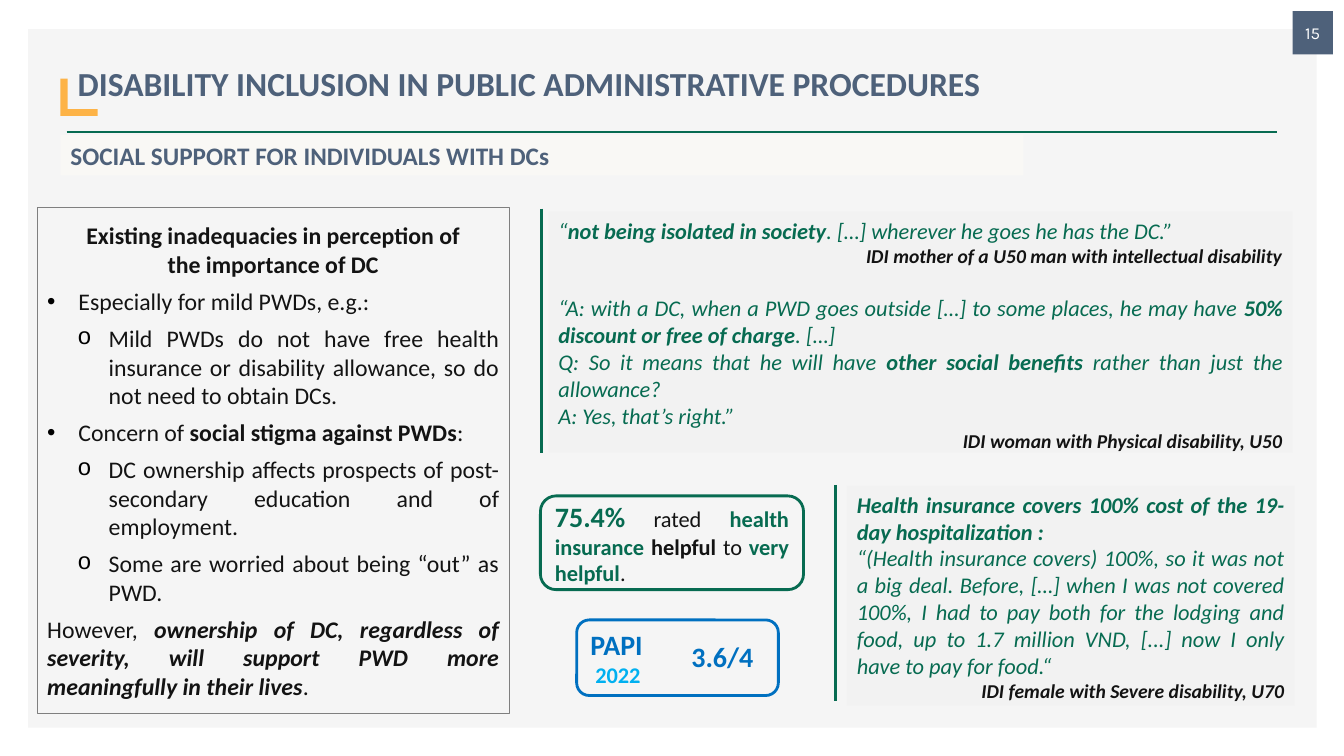
from dataclasses import dataclass, field

from lxml import etree
from pptx import Presentation
from pptx.dml.color import RGBColor
from pptx.enum.shapes import MSO_CONNECTOR, MSO_SHAPE
from pptx.enum.text import MSO_ANCHOR, PP_ALIGN
from pptx.oxml.ns import qn
from pptx.util import Inches, Pt

LEFT, CENTER, RIGHT, JUSTIFY = PP_ALIGN.LEFT, PP_ALIGN.CENTER, PP_ALIGN.RIGHT, PP_ALIGN.JUSTIFY
TOP, MIDDLE = MSO_ANCHOR.TOP, MSO_ANCHOR.MIDDLE
RECT, ROUND_RECT = MSO_SHAPE.RECTANGLE, MSO_SHAPE.ROUNDED_RECTANGLE
STRAIGHT = MSO_CONNECTOR.STRAIGHT

WHITE = RGBColor(0xFF, 0xFF, 0xFF)
PANEL = RGBColor(0xF5, 0xF5, 0xF5)
QUOTE_FILL = RGBColor(0xF2, 0xF2, 0xF2)
CREAM = RGBColor(0xF9, 0xF8, 0xF5)
SLATE = RGBColor(0x4E, 0x61, 0x7A)
ORANGE = RGBColor(0xFD, 0xB3, 0x47)
GREEN = RGBColor(0x07, 0x6B, 0x51)
BLUE = RGBColor(0x00, 0x70, 0xC0)
SKY = RGBColor(0x00, 0xB0, 0xF0)
INK = RGBColor(0x13, 0x13, 0x13)
GREY = RGBColor(0x7F, 0x7F, 0x7F)

BULLET_FONTS = {"•": "Arial", "o": "Courier New"}
BULLET_MARGINS = {"•": 0.31, "o": 0.61}
HANGING = 0.31


@dataclass
class Run:
    text: str
    bold: bool | None = None
    italic: bool | None = None
    size: float | None = None
    color: RGBColor | None = None


@dataclass
class Para:
    runs: list[Run] = field(default_factory=list)
    align: PP_ALIGN = JUSTIFY
    bullet: str = ""
    before: float = 0
    after: float = 0


@dataclass
class Quote:
    box: tuple[float, float, float, float]
    rule: tuple[float, float, float]
    paras: list[Para]


def add_bullet(p, char: str) -> None:
    pPr = p._p.get_or_add_pPr()
    pPr.set("marL", str(Inches(BULLET_MARGINS[char])))
    pPr.set("indent", str(-Inches(HANGING)))
    color = etree.SubElement(pPr, qn("a:buClr"))
    etree.SubElement(color, qn("a:srgbClr"), val="000000")
    etree.SubElement(pPr, qn("a:buFont"), typeface=BULLET_FONTS[char])
    etree.SubElement(pPr, qn("a:buChar"), char=char)


def write(sp, paras: list[Para], *, size: float, color: RGBColor, bold: bool = False,
          italic: bool = False, font: str = "Calibri", anchor=MIDDLE, spacing: float = 1.0) -> None:
    """Fill a shape with paragraphs; runs override the given format."""
    tf = sp.text_frame
    tf.word_wrap = True
    tf.vertical_anchor = anchor
    for i, para in enumerate(paras):
        p = tf.paragraphs[0] if i == 0 else tf.add_paragraph()
        if para.bullet:
            add_bullet(p, para.bullet)
        p.alignment = para.align
        p.line_spacing = spacing
        p.space_before, p.space_after = Pt(para.before), Pt(para.after)
        for run in para.runs:
            r = p.add_run()
            r.text = run.text
            r.font.name = font
            r.font.size = Pt(run.size or size)
            r.font.bold = bold if run.bold is None else run.bold
            r.font.italic = italic if run.italic is None else run.italic
            r.font.color.rgb = run.color or color


def add_box(shapes, x: float, y: float, w: float, h: float, *, kind=RECT,
            fill: RGBColor | None = None, line: RGBColor | None = None, width: float = 2):
    sp = shapes.add_shape(kind, Inches(x), Inches(y), Inches(w), Inches(h))
    sp.shadow.inherit = False
    if fill is None:
        sp.fill.background()
    else:
        sp.fill.solid()
        sp.fill.fore_color.rgb = fill
    if line is None:
        sp.line.fill.background()
    else:
        sp.line.color.rgb = line
        sp.line.width = Pt(width)
    return sp


def add_rule(shapes, x1: float, y1: float, x2: float, y2: float, width: float) -> None:
    rule = shapes.add_connector(STRAIGHT, Inches(x1), Inches(y1), Inches(x2), Inches(y2))
    rule.line.color.rgb = GREEN
    rule.line.width = Pt(width)
    etree.SubElement(rule._element.spPr, qn("a:effectLst"))


def add_quote(shapes, quote: Quote) -> None:
    group = shapes.add_group_shape().shapes
    write(add_box(group, *quote.box, fill=QUOTE_FILL), quote.paras,
          size=16, color=GREEN, italic=True, anchor=TOP)
    x, top, bottom = quote.rule
    add_rule(group, x, top, x, bottom, 2.25)


def speaker(text: str) -> Para:
    return Para([Run(text, bold=True, size=14, color=INK)], RIGHT)


PERCEPTION = [
    Para([Run("Existing inadequacies in perception of", bold=True)], CENTER),
    Para([Run("the importance of DC", bold=True)], CENTER, after=6),
    Para([Run("Especially for mild PWDs, e.g.:")], bullet="•", after=6),
    Para([Run("Mild PWDs do not have free health insurance or disability allowance, "
              "so do not need to obtain DCs.")], bullet="o", after=6),
    Para([Run("Concern of"), Run(" social stigma against PWDs", bold=True), Run(":")],
         bullet="•", after=6),
    Para([Run("DC ownership affects prospects of post-secondary education and of employment.")],
         bullet="o", after=6),
    Para([Run("Some are worried about being “out” as PWD.")], bullet="o", after=6),
    Para([Run("However, "),
          Run("ownership of DC, regardless of severity, will support PWD more "
              "meaningfully in their lives", bold=True, italic=True),
          Run(".")], after=6),
]

QUOTES = [
    Quote((5.44, 2.1, 7.38, 2.39), (5.37, 2.07, 4.49), [
        Para([Run("“"), Run("not being isolated in society", bold=True),
              Run(". […] wherever he goes he has the DC.”")]),
        speaker("IDI mother of a U50 man with intellectual disability"),
        Para([Run("“A: with a DC, when a PWD goes outside […] to some places, he may have "),
              Run("50% discount or free of charge", bold=True), Run(". […]")], before=19.5),
        Para([Run("Q: So it means that he will have "), Run("other social benefits ", bold=True),
              Run("rather than just the allowance?")]),
        Para([Run("A: Yes, that’s right.”")]),
        speaker("IDI woman with Physical disability, U50"),
    ]),
    Quote((8.4, 4.82, 4.44, 2.18), (8.29, 4.81, 6.95), [
        Para([Run("Health insurance covers 100% cost of the 19-day hospitalization :", bold=True)]),
        Para([Run("“(Health insurance covers) 100%, so it was not a big deal. Before, […] when I "
                  "was not covered 100%, I had to pay both for the lodging and food, up to "
                  "1.7 million VND, [...] now I only have to pay for food.“")]),
        speaker("IDI female with Severe disability, U70"),
    ]),
]

RATING = [Para([
    Run("75.4%", bold=True, size=20, color=GREEN), Run(" rated "),
    Run("health insurance ", bold=True, color=GREEN), Run("helpful ", bold=True), Run("to"),
    Run(" very helpful", bold=True, color=GREEN), Run("."),
])]


def main() -> None:
    prs = Presentation()
    prs.slide_width, prs.slide_height = Inches(13.33), Inches(7.5)
    s = prs.slides.add_slide(prs.slide_layouts[5])
    shapes = s.shapes

    add_box(shapes, 0.28, 0.29, 12.78, 6.93, fill=PANEL)
    add_rule(shapes, 0.66, 1.31, 12.67, 1.31, 2)
    number = add_box(shapes, 12.82, 0.11, 0.4, 0.43, fill=SLATE)
    write(number, [Para([Run("15")], CENTER)], size=12, color=WHITE, font="Karla")
    add_box(shapes, 0.6, 0.78, 0.37, 0.37, fill=ORANGE)

    title = shapes.title
    title.left, title.top = Inches(0.67), Inches(0.37)
    title.width, title.height = Inches(9.69), Inches(0.71)
    title.fill.solid()
    title.fill.fore_color.rgb = PANEL
    write(title, [Para([Run("DISABILITY INCLUSION IN PUBLIC ADMINISTRATIVE PROCEDURES")], LEFT)],
          size=24, color=SLATE, bold=True, spacing=1.5)
    # The title must cover part of the orange square, leaving an L-shaped corner.
    shapes._spTree.append(title._element)

    subtitle = add_box(shapes, 0.6, 1.34, 9.55, 0.4, fill=CREAM)
    write(subtitle, [Para([Run("SOCIAL SUPPORT FOR INDIVIDUALS WITH DCs")], LEFT)],
          size=18, color=SLATE, bold=True, anchor=TOP)
    write(add_box(shapes, 0.37, 2.06, 4.68, 5.02, line=GREY, width=0.75), PERCEPTION,
          size=17, color=INK)
    for quote in QUOTES:
        add_quote(shapes, quote)

    write(add_box(shapes, 5.36, 4.92, 2.61, 0.93, kind=ROUND_RECT, line=GREEN), RATING,
          size=16, color=INK)
    write(add_box(shapes, 5.72, 6.15, 2, 0.75, kind=ROUND_RECT, line=BLUE),
          [Para([Run("PAPI")], LEFT), Para([Run(" 2022", size=16, color=SKY)], LEFT)],
          size=20, color=BLUE, bold=True)
    score = shapes.add_textbox(Inches(6.72), Inches(6.29), Inches(0.89), Inches(0.44))
    write(score, [Para([Run("3.6/4")], CENTER)], size=20, color=BLUE, bold=True)

    prs.save("out.pptx")


if __name__ == "__main__":
    main()
